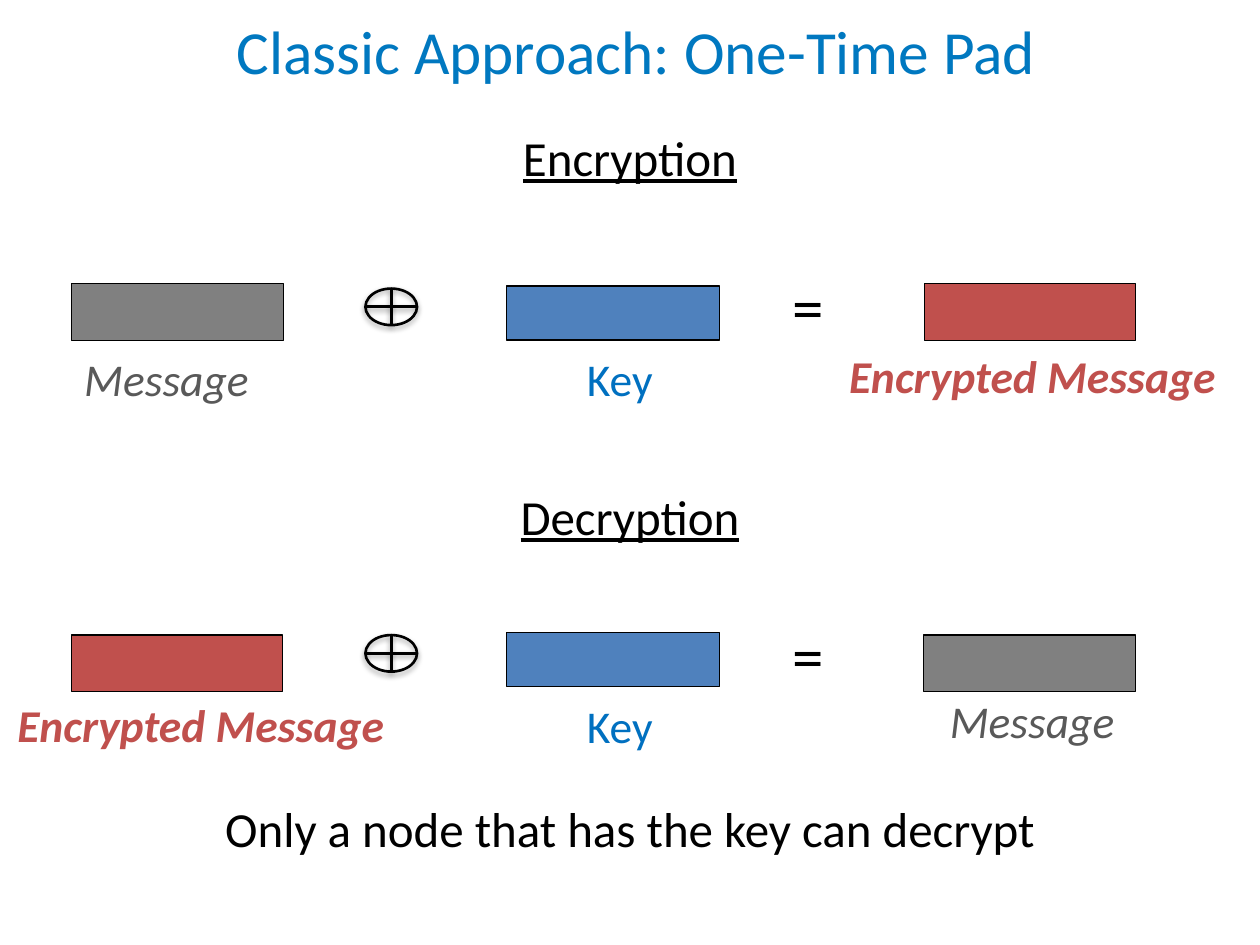
from dataclasses import dataclass

from lxml import etree
from pptx import Presentation
from pptx.dml.color import RGBColor
from pptx.enum.shapes import MSO_CONNECTOR, MSO_SHAPE
from pptx.enum.text import MSO_ANCHOR, MSO_AUTO_SIZE, PP_ALIGN
from pptx.oxml.ns import qn
from pptx.util import Inches, Length, Pt

CENTER, LEFT = PP_ALIGN.CENTER, PP_ALIGN.LEFT
MIDDLE = MSO_ANCHOR.MIDDLE
NO_FIT, GROW = MSO_AUTO_SIZE.NONE, MSO_AUTO_SIZE.SHAPE_TO_FIT_TEXT
RECT, OVAL = MSO_SHAPE.RECTANGLE, MSO_SHAPE.OVAL
STRAIGHT = MSO_CONNECTOR.STRAIGHT

COLS, ROWS = 100, 75
WIDE, TALL = Inches(10), Inches(7.5)
FONT, BLACK = "Calibri", "000000"


@dataclass(frozen=True)
class Kind:
    """Look of one sort of data block and its label; sizes in grid units."""
    word: str
    fill: str
    ink: str
    wide: float
    tall: float
    span: float
    bold: bool = False
    italic: bool = False


@dataclass(frozen=True)
class Block:
    """A data block at (col, row) with its label at (tag_col, tag_row)."""
    kind: Kind
    col: float
    row: float
    tag_col: float
    tag_row: float


@dataclass(frozen=True)
class Stage:
    """One equation: left block XOR key = right block."""
    name: str
    head: float
    xor: float
    equal: float
    blocks: tuple[Block, ...]


PLAIN = Kind("Message", "808080", "595959", 16.8, 4.5, 17.6, italic=True)
KEY = Kind("Key", "4F81BD", "0070C0", 16.9, 4.3, 11.7)
SECRET = Kind("Encrypted Message", "C0504D", "C0504D", 16.7, 4.5, 31.4, True, True)

STAGES = (
    Stage("Encryption", 9.6, 22.9, 20.7, (
        Block(PLAIN, 5.7, 22.5, 5.7, 27.4),
        Block(KEY, 40.2, 22.7, 45.6, 27.4),
        Block(SECRET, 73.4, 22.5, 66.4, 27.1))),
    Stage("Decryption", 38.1, 50.4, 48.4, (
        Block(SECRET, 5.7, 50.4, 0.4, 54.8),
        Block(KEY, 40.2, 50.2, 45.6, 54.9),
        Block(PLAIN, 73.3, 50.4, 74.4, 54.5))),
)


def rgb(code: str) -> RGBColor:
    return RGBColor.from_string(code)


def grid(col: float, row: float) -> tuple[Length, Length]:
    return Length(round(WIDE * col / COLS)), Length(round(TALL * row / ROWS))


def write(frame, words: str, size: float, ink: str = BLACK, align=LEFT,
          bold: bool = False, italic: bool = False, under: bool = False) -> None:
    frame.word_wrap = True
    para = frame.paragraphs[0]
    para.text, para.alignment = words, align
    font = para.font
    font.name, font.size, font.color.rgb = FONT, Pt(size), rgb(ink)
    font.bold, font.italic, font.underline = bold, italic, under


def label(slide, col: float, row: float, wide: float, tall: float,
          words: str, size: float, **look) -> None:
    box = slide.shapes.add_textbox(*grid(col, row), *grid(wide, tall))
    write(box.text_frame, words, size, **look)
    box.text_frame.auto_size = GROW


def shade(shape, dist: float, alpha: int) -> None:
    """Give the shape a soft shadow straight below it."""
    effects = etree.SubElement(shape.element.spPr, qn("a:effectLst"))
    outer = etree.SubElement(effects, qn("a:outerShdw"), blurRad=str(Pt(3.1)),
                             dist=str(Pt(dist)), dir="5400000", rotWithShape="0")
    color = etree.SubElement(outer, qn("a:srgbClr"), val=BLACK)
    etree.SubElement(color, qn("a:alpha"), val=str(alpha * 1000))


def stroke(shape, width: float) -> None:
    shape.line.color.rgb = rgb(BLACK)
    shape.line.width = Pt(width)


def draw_xor(slide, row: float) -> None:
    """Draw the circled plus as one group."""
    col, wide, tall = 29, 4.1, 2.9
    group = slide.shapes.add_group_shape().shapes
    ring = group.add_shape(OVAL, *grid(col, row), *grid(wide, tall))
    ring.fill.background()
    stroke(ring, 1.5)
    shade(ring, 1.8, 35)
    mid_col, mid_row = col + wide / 2, row + tall / 2
    for start, end in (((col, mid_row), (col + wide, mid_row)),
                       ((mid_col, row), (mid_col, row + tall))):
        bar = group.add_connector(STRAIGHT, *grid(*start), *grid(*end))
        stroke(bar, 1.5)
        shade(bar, 1.6, 38)


def draw_block(slide, block: Block) -> None:
    kind = block.kind
    bar = slide.shapes.add_shape(RECT, *grid(block.col, block.row),
                                 *grid(kind.wide, kind.tall))
    bar.fill.solid()
    bar.fill.fore_color.rgb = rgb(kind.fill)
    stroke(bar, 0.75)
    bar.shadow.inherit = False
    label(slide, block.tag_col, block.tag_row, kind.span, 5.4, kind.word, 26,
          ink=kind.ink, bold=kind.bold, italic=kind.italic)


def draw_stage(slide, stage: Stage) -> None:
    label(slide, 37.1, stage.head, 25.8, 5.7, stage.name, 28,
          align=CENTER, under=True)
    draw_xor(slide, stage.xor)
    label(slide, 61.9, stage.equal, 6.1, 7.1, "=", 36)
    for block in stage.blocks:
        draw_block(slide, block)


def draw_title(slide) -> None:
    title = slide.shapes.title
    title.left, title.top = grid(0, 0.1)
    title.width, title.height = grid(COLS, 7.7)
    frame = title.text_frame
    write(frame, "Classic Approach: One-Time Pad", 35, "0078C0", CENTER)
    frame.auto_size, frame.vertical_anchor = NO_FIT, MIDDLE
    frame.margin_left = Inches(0.2)


def main() -> None:
    deck = Presentation()
    deck.slide_width, deck.slide_height = WIDE, TALL
    slide = deck.slides.add_slide(deck.slide_layouts.get_by_name("Title Only"))
    draw_title(slide)
    for stage in STAGES:
        draw_stage(slide, stage)
    label(slide, 0, 62.9, COLS, 5.7, "Only a node that has the key can decrypt",
          28, align=CENTER)
    deck.save("out.pptx")


if __name__ == "__main__":
    main()
